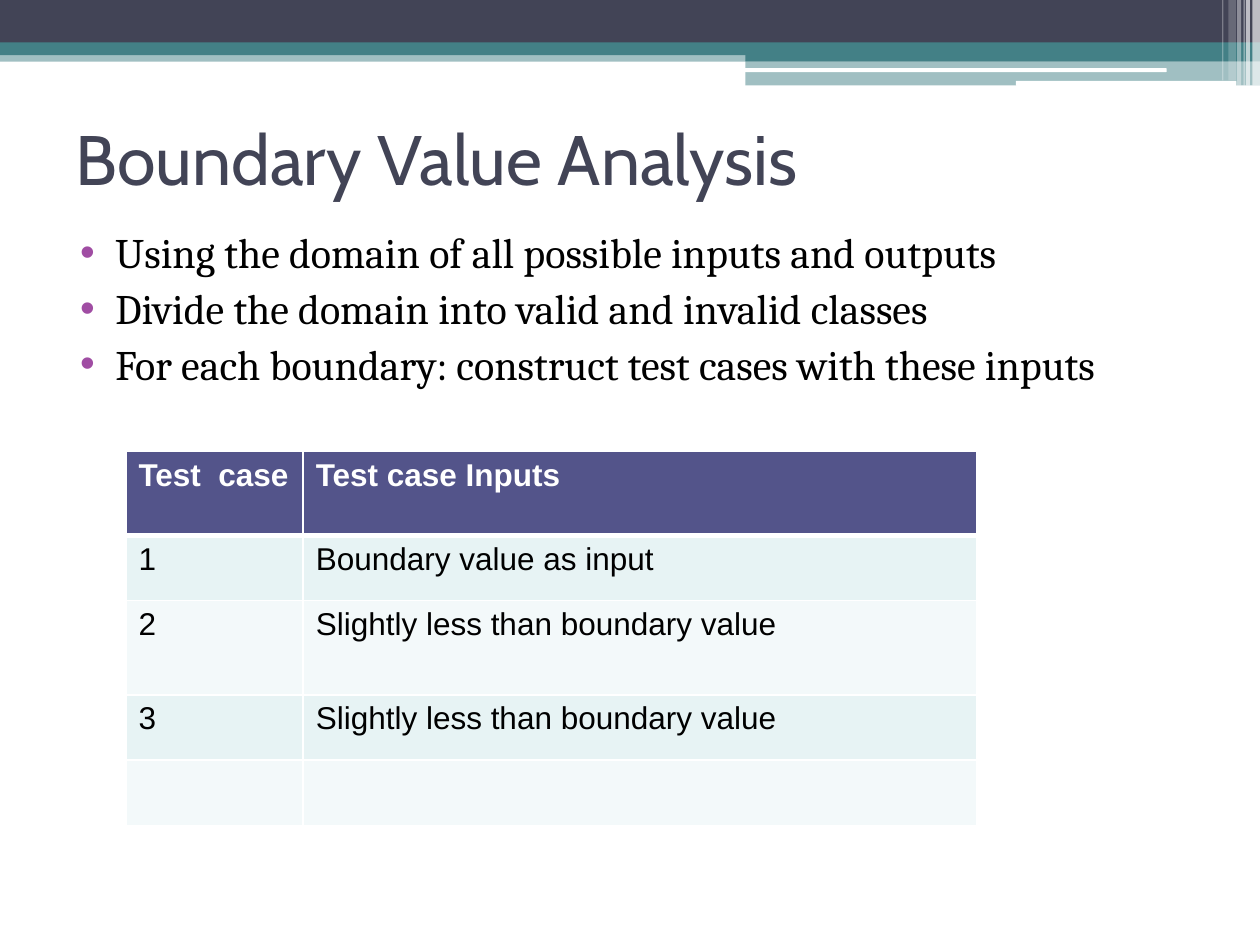
"""Build the Boundary Value Analysis slide with its bullets and test case table."""
from lxml.etree import SubElement
from pptx import Presentation
from pptx.dml.color import RGBColor
from pptx.enum.shapes import MSO_SHAPE
from pptx.enum.text import MSO_ANCHOR, PP_ALIGN
from pptx.oxml.ns import qn
from pptx.util import Pt


def paint(fill, color, alpha=100):
    fill.solid()
    fill.fore_color.rgb = RGBColor.from_string(color)
    if alpha < 100:
        clr = fill._xPr.find(qn("a:solidFill"))[0]
        SubElement(clr, qn("a:alpha"), val=str(alpha * 1000))


def style(paragraph, font_name, size, color, bold=False):
    for run in paragraph.runs:
        run.font.name = font_name
        run.font.size = Pt(size)
        run.font.bold = bold
        paint(run.font.fill, color)


NAVY, TEAL, WHITE, BLACK = "424456", "438086", "FFFFFF", "000000"
HEADER, BAND, PALE, PURPLE = "53548A", "E7F3F4", "F3F9FA", "A04DA3"

prs = Presentation()
prs.slide_width, prs.slide_height = Pt(720), Pt(540)
slide = prs.slides.add_slide(prs.slide_layouts[1])
title, body = slide.placeholders

bands = [
    (MSO_SHAPE.RECTANGLE, 0, 28.8, 720, 6.5, TEAL, 50),
    (MSO_SHAPE.RECTANGLE, 0, 0, 720, 24.5, NAVY, 100),
    (MSO_SHAPE.RECTANGLE, 0, 24.3, 720, 7.2, TEAL, 100),
    (MSO_SHAPE.RECTANGLE, 426, 28, 294, 7, TEAL, 100),
    (MSO_SHAPE.RECTANGLE, 426, 34.6, 294, 14.2, TEAL, 50),
    (MSO_SHAPE.ROUNDED_RECTANGLE, 425.5, 39, 241.2, 2.2, WHITE, 100),
    (MSO_SHAPE.ROUNDED_RECTANGLE, 580.5, 46.2, 126, 2.9, WHITE, 100),
]
stripes = [
    (715.7, 4.3, 49, 65),
    (712, 2.2, 49, 65),
    (710.6, 0.72, 49, 60),
    (707, 2.2, 49, 40),
    (702, 4.3, 46, 20),
    (698.4, 0.72, 46, 30),
]
bands += [(MSO_SHAPE.RECTANGLE, left, 0, width, height, WHITE, alpha)
          for left, width, height, alpha in stripes]
for preset, left, top, width, height, color, alpha in bands:
    band = slide.shapes.add_shape(preset, Pt(left), Pt(top), Pt(width), Pt(height))
    band.shadow.inherit = False
    band.line.fill.background()
    paint(band.fill, color, alpha)

title.left, title.top, title.width, title.height = Pt(36), Pt(48), Pt(648), Pt(84)
title.text_frame.text = "Boundary Value Analysis"
title.text_frame.vertical_anchor = MSO_ANCHOR.MIDDLE
heading = title.text_frame.paragraphs[0]
heading.alignment = PP_ALIGN.LEFT
style(heading, "Cabin", 40, NAVY)

body.left, body.top, body.width, body.height = Pt(30), Pt(126), Pt(648), Pt(387)
body.text_frame.text = "\n".join([
    "Using the domain of all possible inputs and outputs",
    "Divide the domain into valid and invalid classes",
    "For each boundary: construct test cases with these inputs",
])
for step in body.text_frame.paragraphs:
    step.space_before = Pt(3)
    style(step, "Cambria", 24, BLACK)
    props = step._p.get_or_add_pPr()
    props.set("marL", str(Pt(28.8)))
    props.set("indent", str(Pt(-20.16)))
    SubElement(SubElement(props, qn("a:buClr")), qn("a:srgbClr"), val=PURPLE)
    SubElement(props, qn("a:buFont"), typeface="Arial")
    SubElement(props, qn("a:buChar"), char="•")

test_cases = [
    ("Test  case", "Test case Inputs"),
    ("1", "Boundary value as input"),
    ("2", "Slightly less than boundary value"),
    ("3", "Slightly less than boundary value"),
    ("", ""),
]
row_heights = [48, 37.2, 54, 37.2, 37.2]
table = slide.shapes.add_table(
    len(test_cases), 2, Pt(72), Pt(258), Pt(486), Pt(sum(row_heights))).table
table.columns[0].width, table.columns[1].width = Pt(101.3), Pt(384.7)
for r, (height, texts) in enumerate(zip(row_heights, test_cases)):
    table.rows[r].height = Pt(height)
    is_header = r == 0
    for c, text in enumerate(texts):
        cell = table.cell(r, c)
        cell.text_frame.text = text
        style(cell.text_frame.paragraphs[0], "Arial", 18,
              WHITE if is_header else BLACK, is_header)
        cell_props = cell._tc.get_or_add_tcPr()
        weights = {"L": 1, "R": 1, "T": 3 if r == 1 else 1, "B": 3 if is_header else 1}
        for side, weight in weights.items():
            border = SubElement(cell_props, qn(f"a:ln{side}"), w=str(Pt(weight)))
            SubElement(SubElement(border, qn("a:solidFill")), qn("a:srgbClr"), val=WHITE)
        paint(cell.fill, HEADER if is_header else BAND if r % 2 else PALE)

prs.save("out.pptx")
